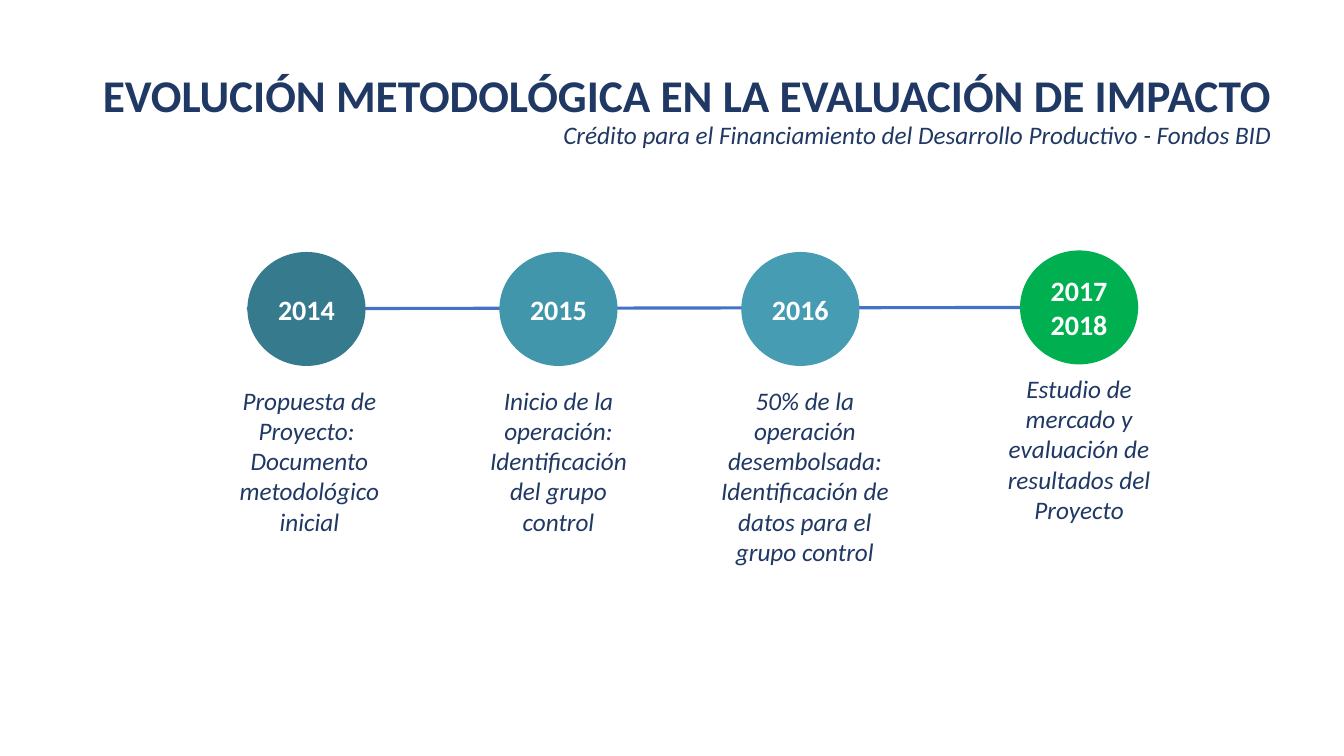
from pptx import Presentation
from pptx.dml.color import RGBColor
from pptx.enum.shapes import MSO_CONNECTOR as Connector, MSO_SHAPE as Shape
from pptx.enum.text import MSO_ANCHOR as Anchor, PP_ALIGN as Align
from pptx.oxml.ns import qn
from pptx.util import Pt
from lxml.etree import SubElement

NAVY = "203864"
CIRCLE_WIDTH, CIRCLE_HEIGHT = 84.4, 81.4


def color(value):
    return RGBColor.from_string(value)


def write(shape, text, size=18, ink=NAVY, bold=False, italic=False,
          align=Align.CENTER, anchor=Anchor.TOP, spacing=None):
    """Fill a shape: newline starts a paragraph, vertical tab breaks a line."""
    frame = shape.text_frame
    frame.word_wrap = True
    frame.vertical_anchor = anchor
    frame.text = text
    for para in frame.paragraphs:
        para.alignment = align
        para.line_spacing = spacing
        for span in para.runs:
            font = span.font
            font.name, font.size = "Calibri", Pt(size)
            font.bold, font.italic = bold, italic
            font.color.rgb = color(ink)


deck = Presentation()
deck.slide_width, deck.slide_height = Pt(960), Pt(540)
page = deck.slides.add_slide(deck.slide_layouts[6])

# Title with subtitle on its second line
title = page.shapes.add_textbox(Pt(45.4), Pt(40.3), Pt(869.8), Pt(79.2))
write(title, "EVOLUCIÓN METODOLÓGICA EN LA EVALUACIÓN DE IMPACTO\v"
      "Crédito para el Financiamiento del Desarrollo Productivo - Fondos BID",
      size=32.4, bold=True, align=Align.RIGHT, anchor=Anchor.MIDDLE, spacing=0.9)
subtitle = title.text_frame.paragraphs[0].runs[1].font
subtitle.size, subtitle.bold, subtitle.italic = Pt(18), False, True

# Timeline behind the circles
timeline = page.shapes.add_connector(
    Connector.STRAIGHT, Pt(176.4), Pt(220.5), Pt(813), Pt(219.5))
timeline.line.color.rgb = color("4472C4")
timeline.line.width = Pt(2.25)
SubElement(timeline._element.spPr, qn("a:effectLst"))

# Milestones: year, fill, circle left and top, note left, top, width and height, note
milestones = [
    ("2014", "367A8D", 176.7, 180, 159.1, 271.4, 123.8, 116.6,
     "Propuesta de Proyecto: \nDocumento metodológico inicial"),
    ("2015", "4296AC", 356.7, 180, 337, 271.4, 123.8, 138.2,
     "Inicio de la operación:\nIdentificación del grupo control"),
    ("2016", "469CB2", 529.5, 180, 506.9, 271.4, 136.1, 138.2,
     "50% de la operación desembolsada: Identificación de datos para el grupo control"),
    ("2017\v2018", "00B050", 728.6, 178.9, 702.7, 263, 136.1, 116.6,
     "Estudio de mercado y evaluación de resultados del Proyecto"),
]
for year, fill, left, top, note_left, note_top, note_width, note_height, note in milestones:
    circle = page.shapes.add_shape(
        Shape.OVAL, Pt(left), Pt(top), Pt(CIRCLE_WIDTH), Pt(CIRCLE_HEIGHT))
    circle.shadow.inherit = False
    circle.fill.solid()
    circle.fill.fore_color.rgb = color(fill)
    circle.line.fill.background()
    write(circle, year, size=20, ink="FFFFFF", bold=True, anchor=Anchor.MIDDLE)

    box = page.shapes.add_textbox(
        Pt(note_left), Pt(note_top), Pt(note_width), Pt(note_height))
    write(box, note, italic=True)

deck.save("out.pptx")
